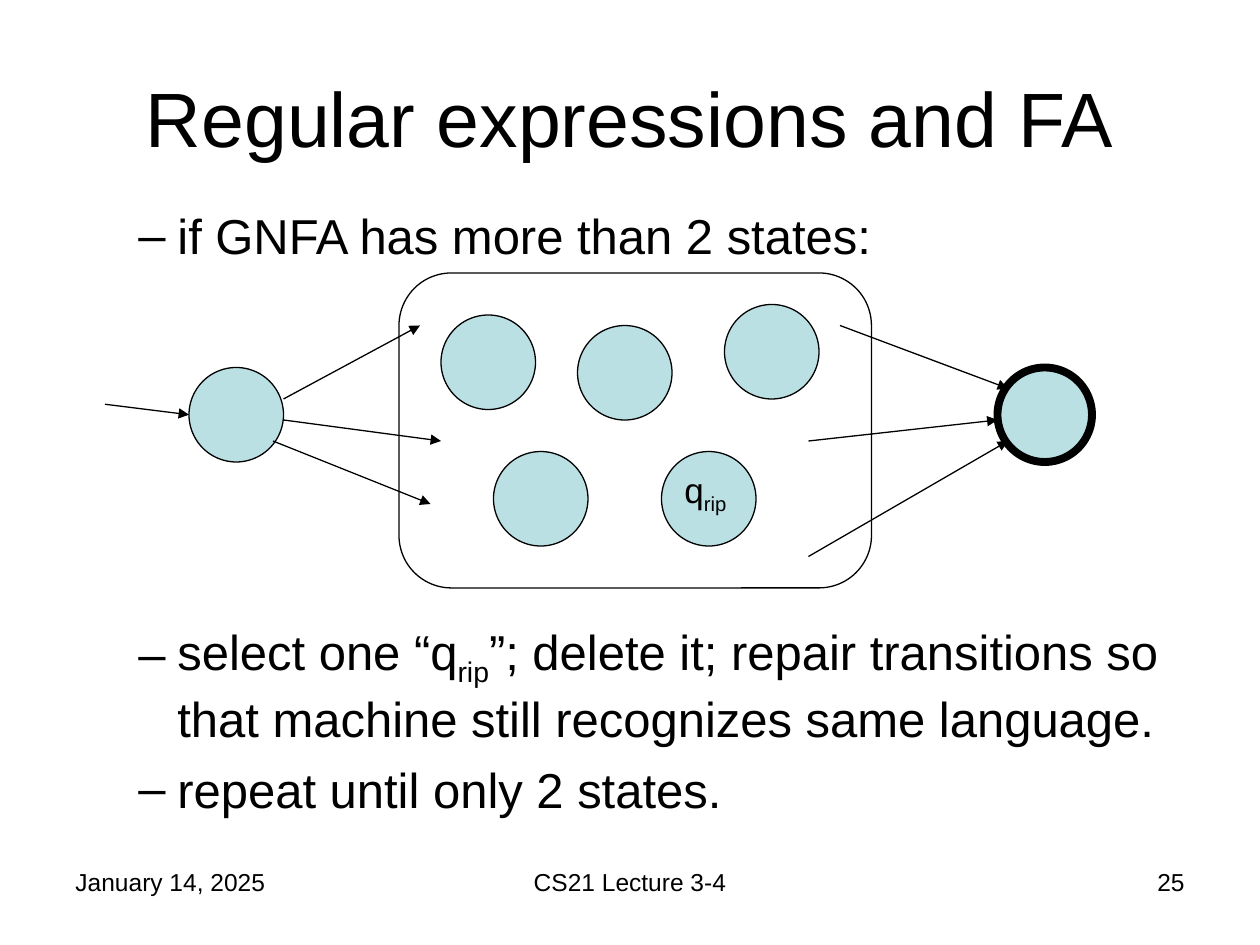
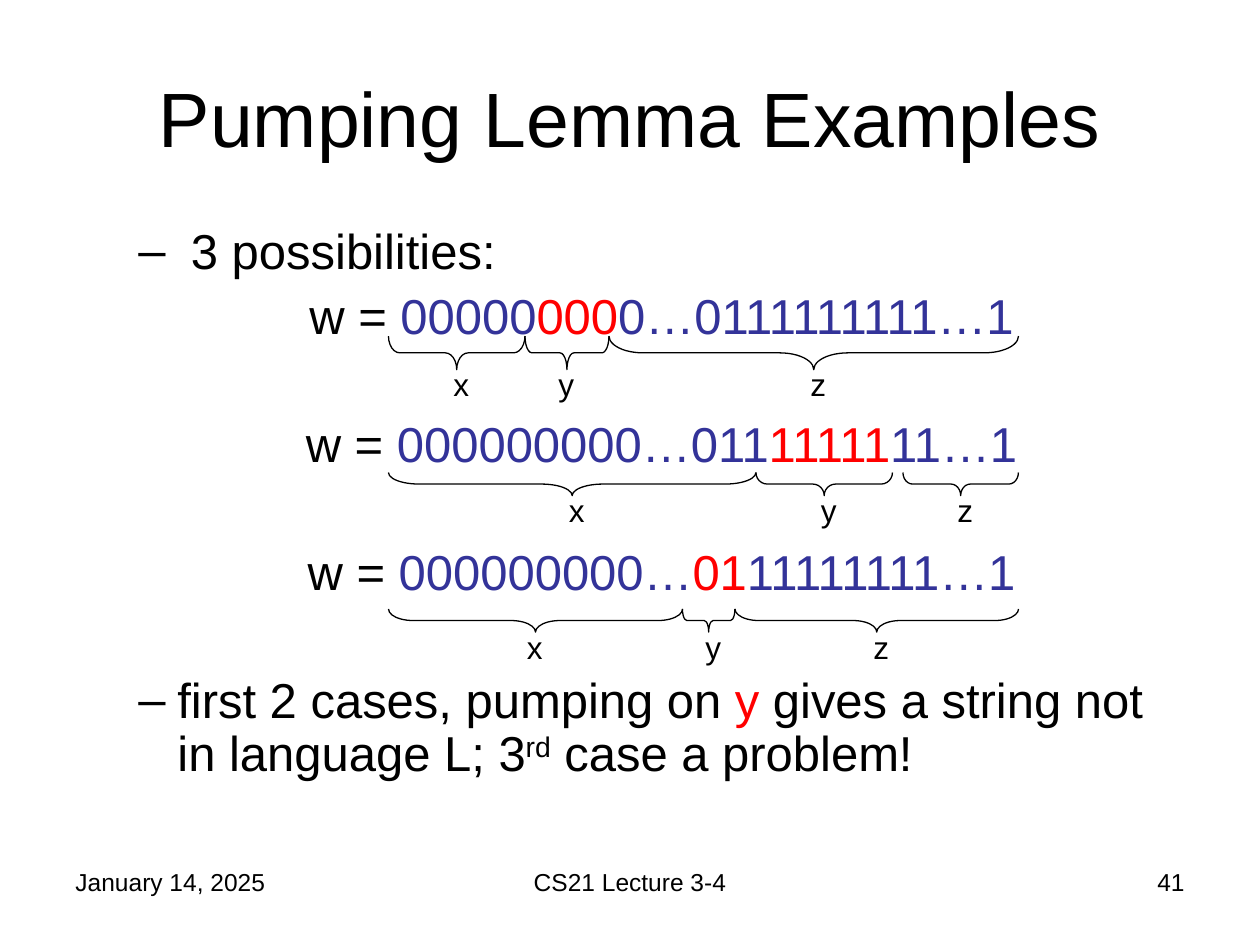
from dataclasses import dataclass

from lxml.etree import SubElement
from pptx import Presentation
from pptx.dml.color import RGBColor as RGB
from pptx.enum.shapes import MSO_CONNECTOR as LINK, MSO_SHAPE as SHAPE
from pptx.enum.text import MSO_ANCHOR as ANCHOR, PP_ALIGN as ALIGN
from pptx.oxml.ns import qn
from pptx.util import Inches, Pt


@dataclass(frozen=True)
class Theme:
    font: str = "Arial"
    ink: RGB = RGB(0, 0, 0)
    state: RGB = RGB(0xBB, 0xE0, 0xE3)
    word: RGB = RGB(0x33, 0x33, 0x99)
    pumped: RGB = RGB(0xFF, 0, 0)
    title: int = 44
    body: int = 28
    state_label: int = 20
    brace_label: int = 18
    footer: int = 14
    thin: float = 0.75
    thick: float = 4.5


T = Theme()
CELL = 1 / 12
WIDTH, HEIGHT = 120, 90

RUN_STYLES = {
    "plain": (T.ink, 0),
    "word": (T.word, 0),
    "pumped": (T.pumped, 0),
    "sub": (T.ink, -25000),
    "sup": (T.ink, 30000),
}

TITLE_BOX = (6, 3.6, 108, 15)
FOOTER_TOP, FOOTER_HEIGHT = 82, 6.2
DATE, COURSE = "January 14, 2025", "CS21 Lecture 3-4"

GNFA = {
    "title": "Regular expressions and FA",
    "number": 25,
    "body_box": (6, 19, 108, 63),
    "line_spacing": 1.0,
    "body": [
        ("dash", 3.5, [("if GNFA has more than 2 states:", "plain")]),
        ("dash", 204, [
            ("select one “q", "plain"), ("rip", "sub"),
            ("”; delete it; repair transitions so that machine still "
             "recognizes same language.", "plain")]),
        ("dash", 7, [("repeat until only 2 states.", "plain")]),
    ],
}
INNER_BOX = (38, 26, 45, 30)
STATE_SIZE = 9
START, ACCEPT = (18, 35), (95, 35)
INNER_STATES = [(42, 30), (69, 29), (55, 31), (47, 43), (63, 43)]
RIP_BOX = (64, 44, 8, 5.2)
RIP_LABEL = [("q", "plain"), ("rip", "sub")]
TRANSITIONS = [
    ((10, 38.5), (18, 39.5)),
    ((27, 38), (40, 31)),
    ((27, 40), (42, 42)),
    ((26, 42), (41, 48)),
    ((80, 31), (96, 37)),
    ((77, 42), (95, 40)),
    ((77, 53), (96, 42)),
]

PUMPING = {
    "title": "Pumping Lemma Examples",
    "number": 41,
    "body_box": (6, 21, 108, 59.4),
    "line_spacing": 0.9,
    "body": [
        ("dash", 3.5, [(" 3 possibilities:", "plain")]),
        ("centre", 7, [("w = ", "plain"), ("00000", "word"),
                       ("000", "pumped"), ("0…0111111111…1", "word")]),
        ("centre", 43, [("w = ", "plain"), ("000000000…011", "word"),
                        ("11111", "pumped"), ("11…1", "word")]),
        ("centre", 43, [("w = ", "plain"), ("000000000…", "word"),
                        ("01", "pumped"), ("11111111…1", "word")]),
        ("dash", 43, [
            ("first 2 cases, pumping on ", "plain"), ("y", "pumped"),
            (" gives a string not in language L; 3", "plain"),
            ("rd", "sup"), (" case a problem!", "plain")]),
    ],
}
SPLITS = [
    {"top": 32, "depth": 3.2,
     "parts": [("x", 37, 50, 42), ("y", 50, 58, 52), ("z", 58, 97, 76)]},
    {"top": 45, "depth": 2.2,
     "parts": [("x", 37, 72, 53), ("y", 72, 85, 77), ("z", 86, 97, 90)]},
    {"top": 58, "depth": 2.2,
     "parts": [("x", 37, 65, 49), ("y", 65, 70, 66), ("z", 70, 97, 82)]},
]


def grid(*cells):
    """Convert grid cells to slide lengths."""
    return [Inches(c * CELL) for c in cells]


def write_runs(p, runs, size):
    """Fill a paragraph with styled runs."""
    for text, style in runs:
        r = p.add_run()
        r.text = text
        color, baseline = RUN_STYLES[style]
        r.font.name, r.font.size, r.font.color.rgb = T.font, Pt(size), color
        if baseline:
            r.font._element.set("baseline", str(baseline))


def add_text(s, box, runs, size, align=ALIGN.LEFT):
    """Add a one-paragraph text box."""
    tf = s.shapes.add_textbox(*grid(*box)).text_frame
    tf.word_wrap = True
    p = tf.paragraphs[0]
    p.alignment = align
    write_runs(p, runs, size)


def add_body(s, box, paragraphs, line_spacing):
    """Add the dashed and centred paragraphs of a slide."""
    tf = s.shapes.add_textbox(*grid(*box)).text_frame
    tf.word_wrap = True
    for i, (kind, before, runs) in enumerate(paragraphs):
        p = tf.add_paragraph() if i else tf.paragraphs[0]
        p.alignment = ALIGN.CENTER if kind == "centre" else ALIGN.LEFT
        p.line_spacing, p.space_before = line_spacing, Pt(before)
        pPr = p._p.get_or_add_pPr()
        pPr.set("marL", str(Inches(0.81)))
        pPr.set("indent", str(Inches(-0.31)))
        if kind == "dash":
            SubElement(pPr, qn("a:buFont"), typeface=T.font)
            SubElement(pPr, qn("a:buChar"), char="–")
        else:
            SubElement(pPr, qn("a:buNone"))
        write_runs(p, runs, T.body)


def add_outline(s, kind, box, fill=None, weight=T.thin):
    """Add an outlined preset shape, filled if a colour is given."""
    sp = s.shapes.add_shape(kind, *grid(*box))
    sp.shadow.inherit = False
    sp.line.color.rgb, sp.line.width = T.ink, Pt(weight)
    if fill is None:
        sp.fill.background()
    else:
        sp.fill.solid()
        sp.fill.fore_color.rgb = fill
    return sp


def add_state(s, corner, weight=T.thin):
    """Add one automaton state."""
    add_outline(s, SHAPE.OVAL, (*corner, STATE_SIZE, STATE_SIZE), T.state, weight)


def add_arrow(s, start, end):
    """Add a transition arrow."""
    c = s.shapes.add_connector(LINK.STRAIGHT, *grid(*start, *end))
    c.line.color.rgb, c.line.width = T.ink, Pt(T.thin)
    SubElement(c.line._get_or_add_ln(), qn("a:tailEnd"), type="triangle")
    SubElement(c._element.spPr, qn("a:effectLst"))


def add_brace(s, left, right, top, depth):
    """Add a brace that opens upwards under a part of a word."""
    span = right - left
    box = ((left + right - depth) / 2, top + (depth - span) / 2, depth, span)
    sp = add_outline(s, SHAPE.LEFT_BRACE, box)
    sp.rotation = 270
    sp.adjustments[0] = span / 12 / depth


def add_base(prs, content):
    """Add a slide with its title, body and footers."""
    s = prs.slides.add_slide(prs.slide_layouts[5])
    title = s.shapes.title
    title.left, title.top, title.width, title.height = grid(*TITLE_BOX)
    tf = title.text_frame
    tf.vertical_anchor = ANCHOR.MIDDLE
    tf.paragraphs[0].alignment = ALIGN.CENTER
    write_runs(tf.paragraphs[0], [(content["title"], "plain")], T.title)
    add_body(s, content["body_box"], content["body"], content["line_spacing"])
    footers = [
        (6, 28, DATE, ALIGN.LEFT),
        (41, 38, COURSE, ALIGN.CENTER),
        (86, 28, str(content["number"]), ALIGN.RIGHT),
    ]
    for left, width, text, align in footers:
        add_text(s, (left, FOOTER_TOP, width, FOOTER_HEIGHT),
                 [(text, "plain")], T.footer, align)
    return s


def build_gnfa(prs):
    """Build the slide on shrinking a GNFA."""
    s = add_base(prs, GNFA)
    add_outline(s, SHAPE.ROUNDED_RECTANGLE, INNER_BOX).adjustments[0] = 1 / 6
    for corner in [START, *INNER_STATES]:
        add_state(s, corner)
    add_state(s, ACCEPT, T.thick)
    for start, end in TRANSITIONS:
        add_arrow(s, start, end)
    add_text(s, RIP_BOX, RIP_LABEL, T.state_label)


def build_pumping(prs):
    """Build the slide on the three ways to split a word."""
    s = add_base(prs, PUMPING)
    for split in SPLITS:
        top, depth = split["top"], split["depth"]
        for name, left, right, label_left in split["parts"]:
            add_brace(s, left, right, top, depth)
            add_text(s, (label_left, top + depth - 1, 5, 4.8),
                     [(name, "plain")], T.brace_label)


def main():
    """Build and save the presentation."""
    prs = Presentation()
    prs.slide_width, prs.slide_height = grid(WIDTH, HEIGHT)
    build_gnfa(prs)
    build_pumping(prs)
    prs.save("out.pptx")


if __name__ == "__main__":
    main()
